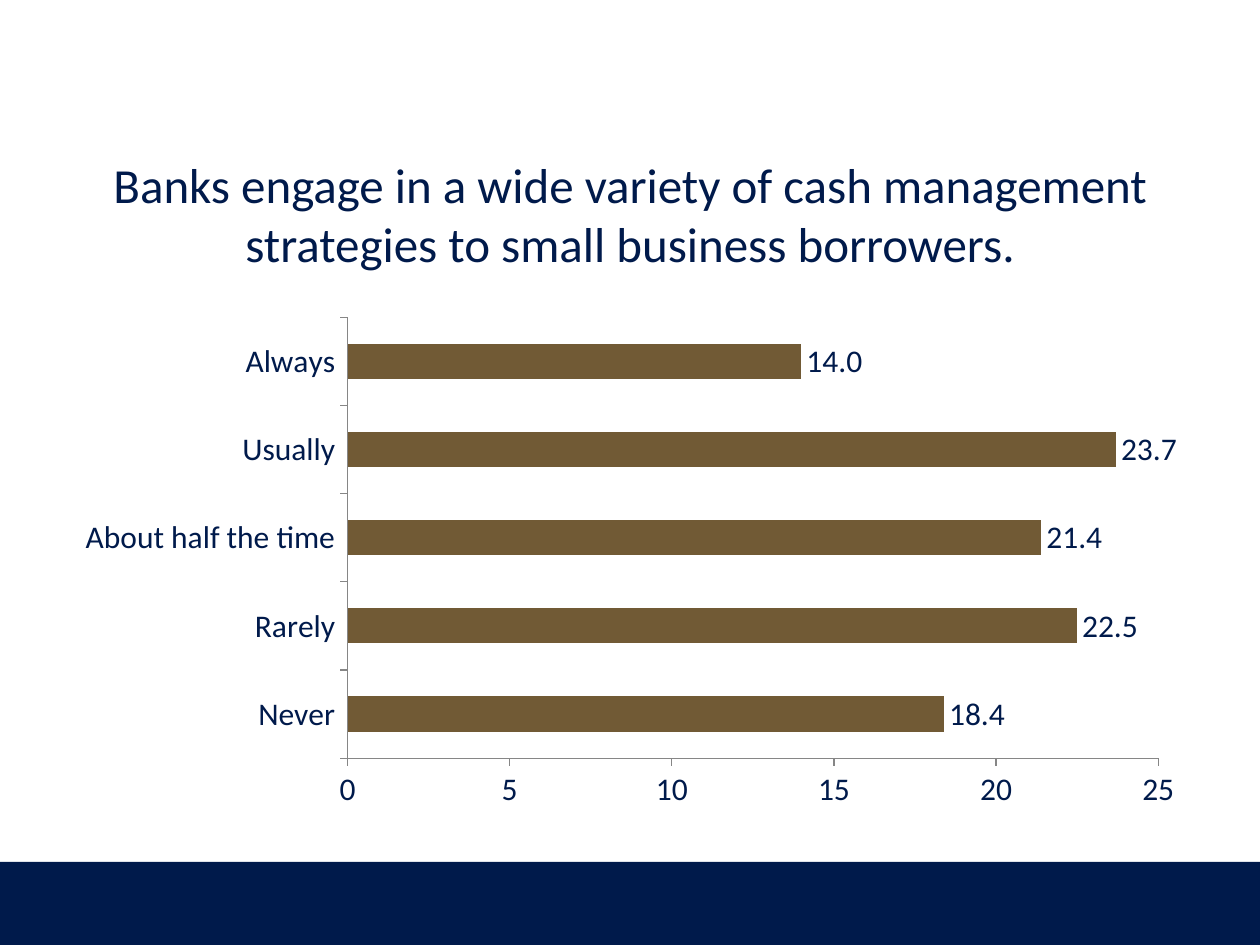
"""Build a slide with a bar chart of how often banks offer cash management."""
from pptx import Presentation
from pptx.chart.data import CategoryChartData
from pptx.dml.color import RGBColor
from pptx.enum.chart import XL_CHART_TYPE, XL_LABEL_POSITION, XL_TICK_MARK
from pptx.enum.shapes import MSO_SHAPE
from pptx.enum.text import MSO_ANCHOR, PP_ALIGN
from pptx.util import Pt

NAVY = RGBColor(0x00, 0x1A, 0x4B)
BROWN = RGBColor(0x71, 0x5A, 0x35)
GRAY = RGBColor(0x86, 0x86, 0x86)
FACE = "Calibri"


def style(font, size):
    font.name = FACE
    font.size = Pt(size)
    font.color.rgb = NAVY


deck = Presentation()
deck.slide_width, deck.slide_height = Pt(720), Pt(540)
slide = deck.slides.add_slide(deck.slide_layouts[5])

band = slide.shapes.add_shape(MSO_SHAPE.RECTANGLE, Pt(0), Pt(492.5), Pt(720), Pt(47.5))
band.shadow.inherit = False
band.fill.solid()
band.fill.fore_color.rgb = NAVY
band.line.fill.background()

title = slide.shapes.title
title.left, title.top, title.width, title.height = Pt(36), Pt(77), Pt(648), Pt(90)
frame = title.text_frame
frame.text = "Banks engage in a wide variety of cash management strategies to small business borrowers."
frame.word_wrap = True
frame.vertical_anchor = MSO_ANCHOR.MIDDLE
frame.paragraphs[0].alignment = PP_ALIGN.CENTER
style(frame.paragraphs[0].font, 28)

data = CategoryChartData(number_format="#,##0.0")
data.categories = ["Never", "Rarely", "About half the time", "Usually", "Always"]
data.add_series("Series 1", [18.4, 22.5, 21.4, 23.7, 14.0])
chart = slide.shapes.add_chart(
    XL_CHART_TYPE.BAR_CLUSTERED, Pt(36), Pt(175.5), Pt(648), Pt(292.5), data
).chart
chart.has_title = False
chart.has_legend = False
style(chart.font, 18)

for axis in (chart.category_axis, chart.value_axis):
    axis.has_major_gridlines = False
    axis.major_tick_mark = XL_TICK_MARK.OUTSIDE
    axis.minor_tick_mark = XL_TICK_MARK.NONE
    axis.format.line.color.rgb = GRAY
    axis.format.line.width = Pt(0.75)
    style(axis.tick_labels.font, 18)

scale = chart.value_axis
scale.minimum_scale, scale.maximum_scale, scale.major_unit = 0, 25, 5
scale.tick_labels.number_format = "0"
scale.tick_labels.number_format_is_linked = False

plot = chart.plots[0]
plot.gap_width = 150
plot.vary_by_categories = False
bars = plot.series[0]
bars.format.fill.solid()
bars.format.fill.fore_color.rgb = BROWN
labels = bars.data_labels
labels.show_value = True
labels.number_format = "#,##0.0"
labels.number_format_is_linked = False
labels.position = XL_LABEL_POSITION.OUTSIDE_END
style(labels.font, 18)

deck.save("out.pptx")
